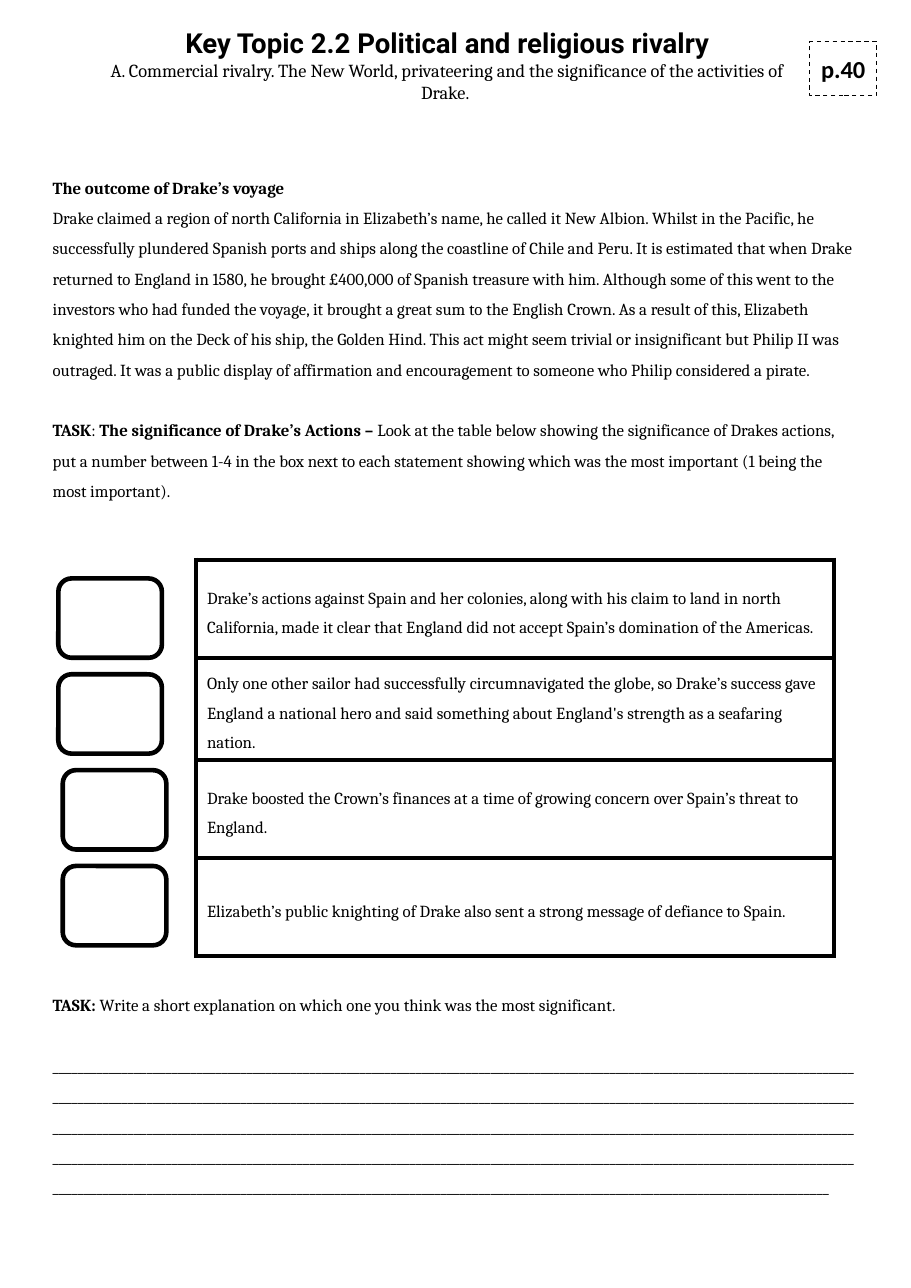
from lxml import etree
from pptx import Presentation
from pptx.dml.color import RGBColor
from pptx.enum.dml import MSO_LINE
from pptx.enum.shapes import MSO_SHAPE
from pptx.enum.text import MSO_ANCHOR, PP_ALIGN
from pptx.oxml.ns import qn
from pptx.util import Inches, Pt

RECTANGLE, ROUNDED = MSO_SHAPE.RECTANGLE, MSO_SHAPE.ROUNDED_RECTANGLE
MIDDLE, TOP = MSO_ANCHOR.MIDDLE, MSO_ANCHOR.TOP
CENTER, LEFT = PP_ALIGN.CENTER, PP_ALIGN.LEFT
BLACK, WHITE = "000000", "FFFFFF"
BODY_FONT, BODY_SIZE, LINE_SPACING = "Cambria", 11, 1.5
BLANK_LINE = 19.75  # height of one body line in points
MARGIN, BODY_WIDTH = 0.38, 7.5
ROW_HEIGHT = 0.89
UNDERSCORES = 636

STATEMENTS = [
    "Drake’s actions against Spain and her colonies, along with his claim to land in north "
    "California, made it clear that England did not accept Spain’s domination of the Americas.",
    "Only one other sailor had successfully circumnavigated the globe, so Drake’s success gave "
    "England a national hero and said something about England's strength as a seafaring nation.",
    "Drake boosted the Crown’s finances at a time of growing concern over Spain’s threat to England.",
    "Elizabeth’s public knighting of Drake also sent a strong message of defiance to Spain.",
]
OUTCOME = (
    "Drake claimed a region of north California in Elizabeth’s name, he called it New Albion. "
    "Whilst in the Pacific, he successfully plundered Spanish ports and ships along the coastline "
    "of Chile and Peru. It is estimated that when Drake returned to England in 1580, he brought "
    "£400,000 of Spanish treasure with him. Although some of this went to the investors who had "
    "funded the voyage, it brought a great sum to the English Crown. As a result of this, Elizabeth "
    "knighted him on the Deck of his ship, the Golden Hind. This act might seem trivial or "
    "insignificant but Philip II was outraged. It was a public display of affirmation and "
    "encouragement to someone who Philip considered a pirate."
)
RANKING_TASK = (
    "Look at the table below showing the significance of Drakes actions, put a number between 1-4 "
    "in the box next to each statement showing which was the most important (1 being the most important)."
)


def color(value):
    return RGBColor.from_string(value)


def add_run(paragraph, text, bold=False, size=BODY_SIZE, font=BODY_FONT):
    run = paragraph.add_run()
    run.text = text
    run.font.name, run.font.size, run.font.bold = font, Pt(size), bold
    run.font.color.rgb = color(BLACK)


def add_text_box(slide, box, inset=0.05, anchor=TOP):
    frame = slide.shapes.add_textbox(*map(Inches, box)).text_frame
    frame.word_wrap = True
    frame.vertical_anchor = anchor
    frame.margin_top = frame.margin_bottom = Inches(inset)
    frame.margin_left = frame.margin_right = Inches(0.1)
    return frame


def add_outlined_shape(slide, kind, box, width):
    shape = slide.shapes.add_shape(kind, *map(Inches, box))
    shape.shadow.inherit = False
    shape.fill.solid()
    shape.fill.fore_color.rgb = color(WHITE)
    shape.line.color.rgb = color(BLACK)
    shape.line.width = Pt(width)
    return shape


def add_heading(slide, box):
    frame = add_text_box(slide, box, 0.1, MIDDLE)
    title, subtitle = frame.paragraphs[0], frame.add_paragraph()
    title.alignment = subtitle.alignment = CENTER
    add_run(title, "Key Topic 2.2 Political and religious rivalry", True, 18, "Roboto")
    add_run(subtitle, "A. Commercial rivalry. The New World, privateering and the significance "
            "of the activities of Drake.\u00a0", size=12)


def add_page_badge(slide, box):
    badge = add_outlined_shape(slide, RECTANGLE, box, 0.75)
    badge.line.dash_style = MSO_LINE.DASH
    frame = badge.text_frame
    frame.vertical_anchor = MIDDLE
    paragraph = frame.paragraphs[0]
    paragraph.alignment = CENTER
    add_run(paragraph, "p.40", True, 16, "Calibri")


def add_body(slide, box, paragraphs):
    """Place body paragraphs, each given as (space before, [(text, bold), ...])."""
    frame = add_text_box(slide, box)
    for index, (gap, runs) in enumerate(paragraphs):
        paragraph = frame.add_paragraph() if index else frame.paragraphs[0]
        paragraph.line_spacing = LINE_SPACING
        if gap:
            paragraph.space_before = Pt(gap)
        for text, bold in runs:
            add_run(paragraph, text, bold)


def set_borders(cell, width):
    properties = cell._tc.get_or_add_tcPr()
    for position, side in enumerate(("lnL", "lnR", "lnT", "lnB")):
        line = etree.Element(qn(f"a:{side}"), w=str(Pt(width)))
        fill = etree.SubElement(line, qn("a:solidFill"))
        etree.SubElement(fill, qn("a:srgbClr"), val=BLACK)
        properties.insert(position, line)


def add_statements(slide, box):
    frame = slide.shapes.add_table(len(STATEMENTS), 1, *map(Inches, box))
    table = frame.table
    table.first_row = table.horz_banding = False
    for row, statement in zip(table.rows, STATEMENTS):
        row.height = Inches(ROW_HEIGHT)
        cell = row.cells[0]
        cell.fill.background()
        cell.vertical_anchor = MIDDLE
        set_borders(cell, 3)
        paragraph = cell.text_frame.paragraphs[0]
        paragraph.alignment = LEFT
        paragraph.line_spacing = LINE_SPACING
        add_run(paragraph, statement)


def add_ranking_boxes(slide, left, top):
    for index in range(len(STATEMENTS)):
        shift = 0.04 if index >= 2 else 0
        add_outlined_shape(slide, ROUNDED, (left + shift, top + index * 0.87, 0.94, 0.72), 3)


def build_worksheet(presentation):
    slide = presentation.slides.add_slide(presentation.slide_layouts[6])
    add_page_badge(slide, (7.35, 0.38, 0.61, 0.49))
    add_heading(slide, (0.77, 0.25, 6.58, 0.67))
    add_body(slide, (MARGIN, 1.47, BODY_WIDTH, 3.4), [
        (0, [("The outcome of Drake’s voyage", True)]),
        (0, [(OUTCOME, False)]),
        (BLANK_LINE, [("TASK", True), (": ", False),
                      ("The significance of Drake’s Actions – ", True), (RANKING_TASK, False)]),
    ])
    add_statements(slide, (1.78, 5.08, 5.79, ROW_HEIGHT * len(STATEMENTS)))
    add_ranking_boxes(slide, 0.53, 5.25)
    add_body(slide, (MARGIN, 8.89, BODY_WIDTH, 2.01), [
        (0, [("TASK: ", True),
             ("Write a short explanation on which one you think was the most significant.", False)]),
        (BLANK_LINE, [("_" * UNDERSCORES, False)]),
    ])


def main():
    presentation = Presentation()
    presentation.slide_width, presentation.slide_height = Inches(8.27), Inches(11.69)
    build_worksheet(presentation)
    presentation.save("out.pptx")


if __name__ == "__main__":
    main()
